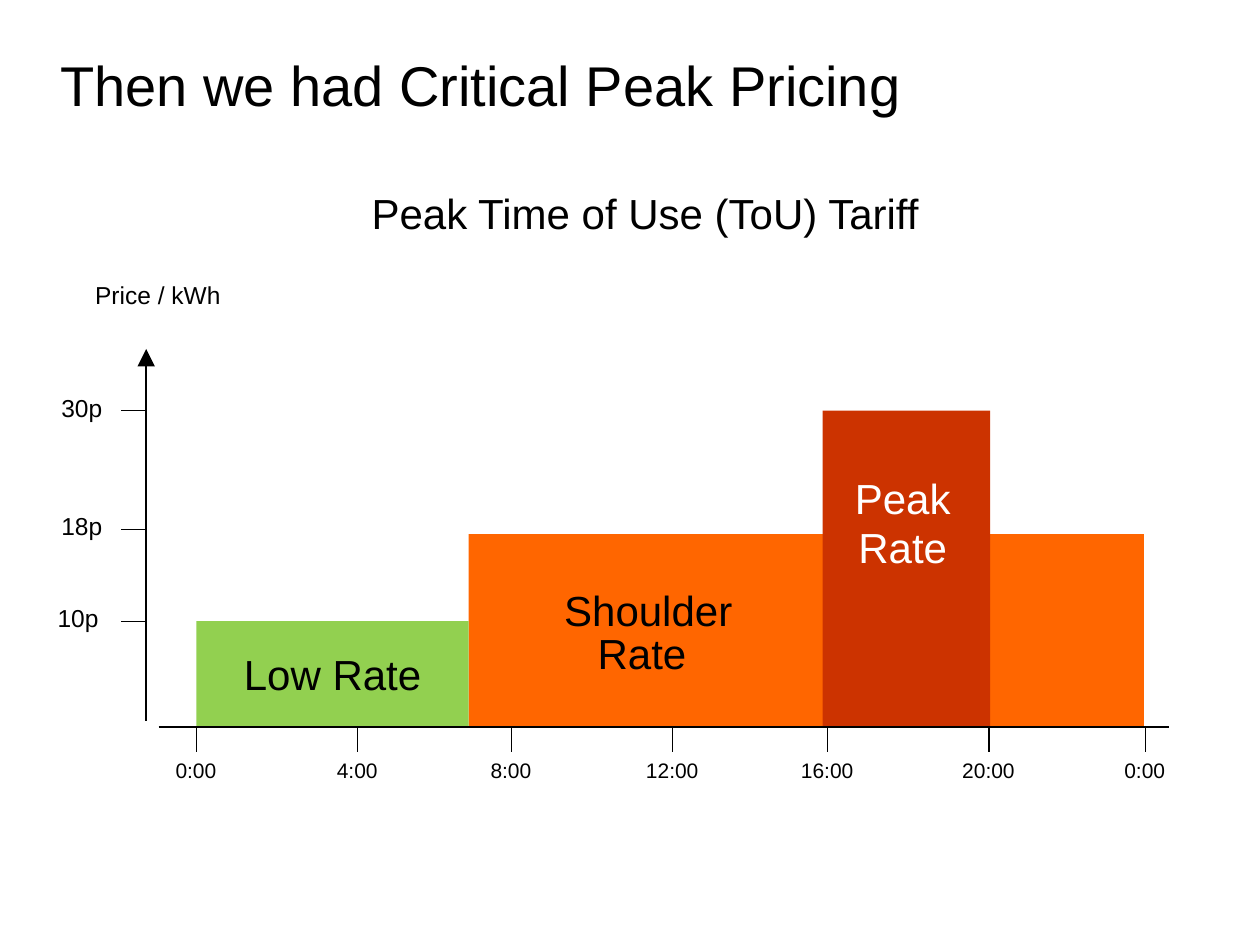
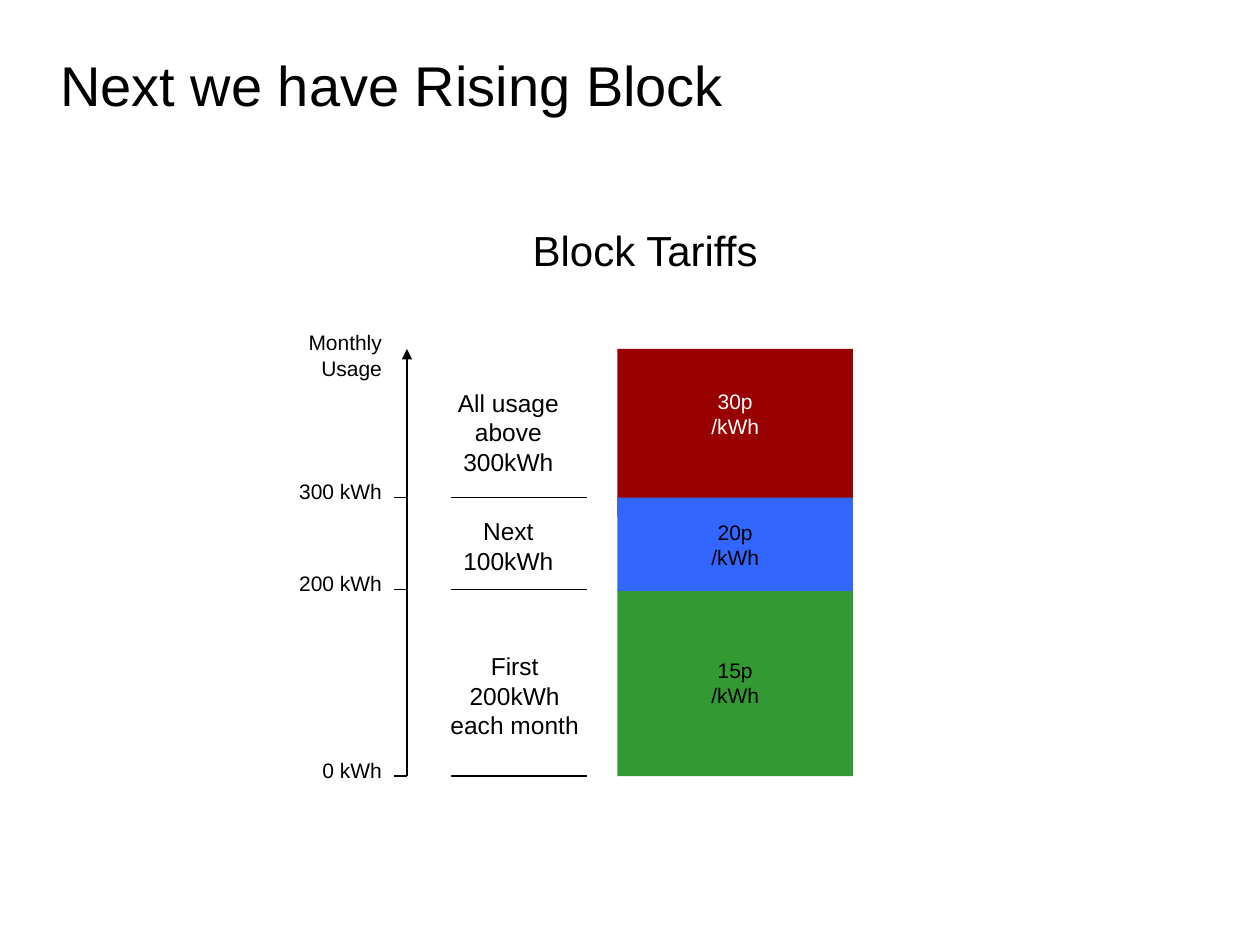
from lxml.etree import SubElement
from pptx import Presentation
from pptx.dml.color import RGBColor
from pptx.enum.shapes import MSO_CONNECTOR, MSO_SHAPE
from pptx.enum.text import MSO_ANCHOR, PP_ALIGN
from pptx.oxml.ns import qn
from pptx.util import Pt

PX = 9144  # 100 px to the inch
BLACK, WHITE = "000000", "FFFFFF"
LOW, SHOULDER, PEAK = "92D050", "FF6600", "CC3300"
FIRST, NEXT, ABOVE = "339933", "3366FF", "990000"
LEFT, MID, RIGHT = PP_ALIGN.LEFT, PP_ALIGN.CENTER, PP_ALIGN.RIGHT


def emu(*sizes):
    return [size * PX for size in sizes]


def tint(code):
    return RGBColor.from_string(code)


def write(frame, text, size, align=MID, color=BLACK):
    """Fill a text frame, one paragraph per line of text."""
    frame.text = text
    style = {"name": "Arial", "size": Pt(size)}
    for para in frame.paragraphs:
        para.alignment = align
        for run in para.runs:
            for key, value in style.items():
                setattr(run.font, key, value)
            run.font.color.rgb = tint(color)


def label(slide, text, box, size, align=MID, color=BLACK):
    frame = slide.shapes.add_textbox(*emu(*box)).text_frame
    frame.word_wrap = True
    write(frame, text, size, align, color)


def block(slide, box, fill, text="", size=12, color=BLACK, lift=0):
    """Draw a flat bar; lift moves its centred text up by that many px."""
    shape = slide.shapes.add_shape(MSO_SHAPE.RECTANGLE, *emu(*box))
    shape.shadow.inherit = False
    shape.fill.solid()
    shape.fill.fore_color.rgb = tint(fill)
    shape.line.fill.background()
    if text:
        frame = shape.text_frame
        frame.word_wrap = False
        frame.vertical_anchor = MSO_ANCHOR.MIDDLE
        frame.margin_bottom = (5 + 2 * lift) * PX
        write(frame, text, size, color=color)


def rule(slide, start, end, head=None):
    """Draw a thin line; head is the size of an arrowhead at its end."""
    line = slide.shapes.add_connector(MSO_CONNECTOR.STRAIGHT, *emu(*start, *end))
    line.line.color.rgb = tint(BLACK)
    line.line.width = Pt(0.75)
    if head:
        SubElement(line.line._get_or_add_ln(), qn("a:tailEnd"),
                   type="triangle", w=head, len=head)
    SubElement(line._element.spPr, qn("a:effectLst"))


def start(deck, title, chart, top):
    """Add a slide with its title and the heading of its chart."""
    slide = deck.slides.add_slide(deck.slide_layouts[6])
    label(slide, title, (38, 35, 863, 84), 32, LEFT)
    label(slide, chart, (170, top, 684, 50), 24)
    return slide


def peak(deck):
    slide = start(deck, "Then we had Critical Peak Pricing",
                  "Peak Time of Use (ToU) Tariff", 144)
    base, axis = 577, 116
    block(slide, (372, 424, 536, base - 424), SHOULDER)
    block(slide, (156, 493, 216, base - 493), LOW, "Low Rate", 24)
    block(slide, (653, 326, 133, base - 326), PEAK)

    rule(slide, (126, base), (928, base))
    for step, x in enumerate((156, 284, 406, 534, 657, 785, 909)):
        rule(slide, (x, base), (x, base + 20))
        label(slide, f"{step * 4 % 24}:00", (x - 45, 596, 89, 30), 12)

    rule(slide, (axis, 572), (axis, 277), "lg")
    label(slide, "Price / kWh", (52, 217, 133, 33), 14, RIGHT)
    for price, y, x in (("10p", 493, 0), ("18p", 420, 3), ("30p", 326, 3)):
        rule(slide, (axis, y), (axis - 20, y))
        label(slide, price, (x, y - 19, 88, 33), 14, RIGHT)

    for word, x, y, color in (("Shoulder", 426, 459, BLACK),
                              ("Rate", 421, 493, BLACK),
                              ("Peak", 628, 370, WHITE),
                              ("Rate", 628, 409, WHITE)):
        label(slide, word, (x, y, 177, 50), 24, color=color)


def rising(deck):
    slide = start(deck, "Next we have Rising Block", "Block Tariffs", 173)
    axis, left, wide = 323, 490, 187
    for usage, y in ((0, 616), (200, 468), (300, 395)):
        rule(slide, (313, y), (687, y))
        label(slide, f"{usage} kWh", (195, y - 20, 118, 30), 12, RIGHT)

    # White panels break each level line into a tick and a divider
    block(slide, (466, 262, 285, 374), WHITE)
    block(slide, (axis, 296, 35, 354), WHITE)
    block(slide, (left, 277, wide, 133), ABOVE, "30p\n/kWh", color=WHITE, lift=15)
    block(slide, (left, 468, wide, 148), FIRST, "15p\n/kWh")
    block(slide, (left, 395, wide, 74), NEXT, "20p\n/kWh")

    rule(slide, (axis, 616), (axis, 277), "med")
    label(slide, "Monthly Usage", (195, 257, 118, 80), 12, RIGHT)
    for text, x, y, high in (("First 200kWh each month", 342, 512, 80),
                             ("Next 100kWh", 337, 405, 57),
                             ("All usage above 300kWh", 337, 303, 80)):
        label(slide, text, (x, y, 133, high), 14)


def main():
    deck = Presentation()
    deck.slide_width, deck.slide_height = emu(1000, 750)
    peak(deck)
    rising(deck)
    deck.save("out.pptx")


if __name__ == "__main__":
    main()
